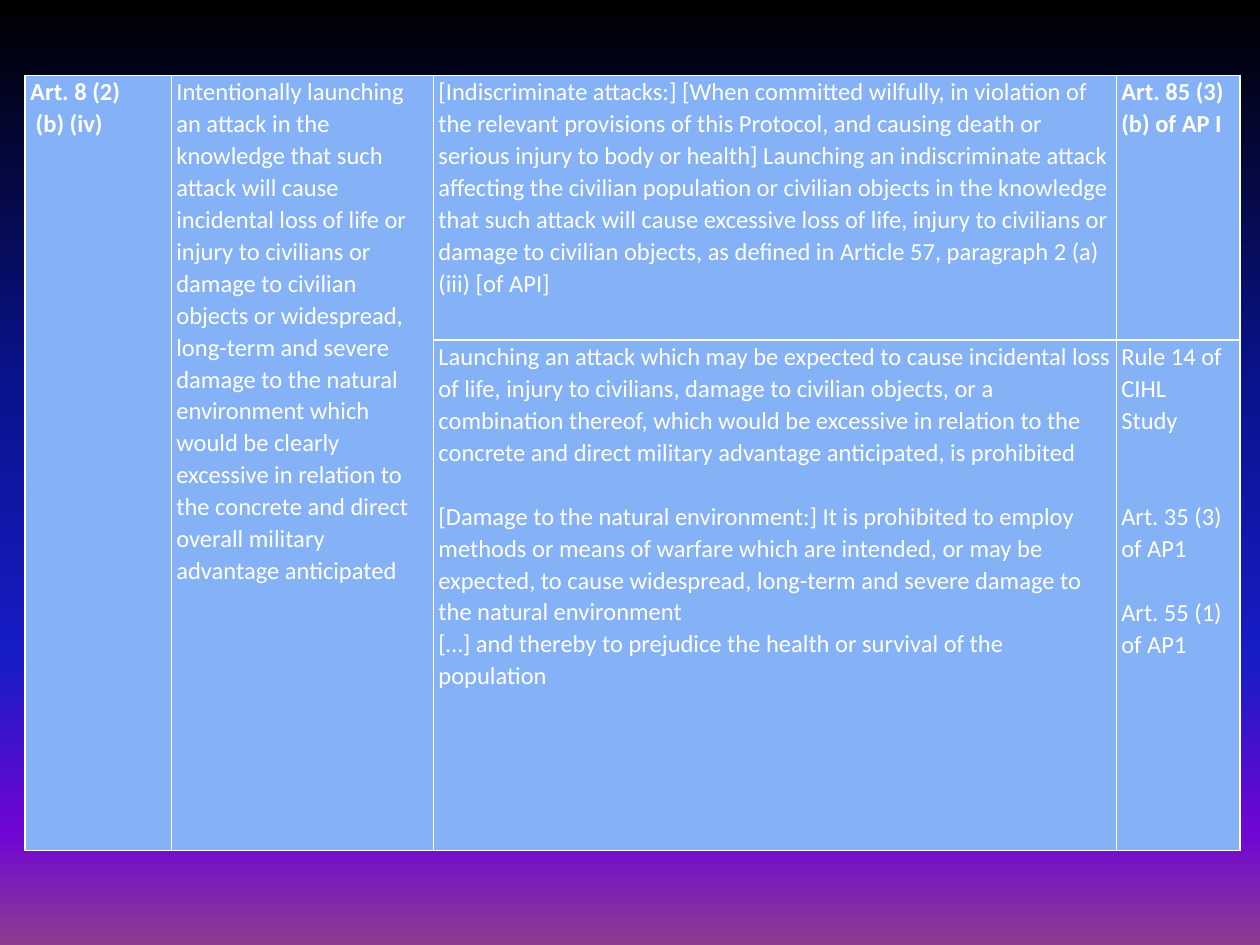
from dataclasses import dataclass

import lxml.etree
import pptx
import pptx.dml.color
import pptx.oxml.ns
import pptx.util
from pptx.util import Inches


@dataclass(frozen=True)
class Theme:
    font: str = "Calibri"
    size: float = 14
    line_spacing: float = 1.07
    text: str = "FFFFFF"
    cell: str = "85B2F6"
    border: str = "FFFFFF"
    border_width: float = 1
    background: tuple = (
        (0, "000000"),
        (40, "0A128C"),
        (70, "181CC7"),
        (88, "7005D4"),
        (100, "8C3D91"),
    )


@dataclass(frozen=True)
class Para:
    text: str
    bold: bool = False
    gap_lines: int = 0


@dataclass(frozen=True)
class Entry:
    row: int
    col: int
    paras: tuple
    row_span: int = 1


THEME = Theme()
LINE_HEIGHT = 18.3
COLUMNS = (1.16, 2.08, 5.42, 0.98)
ROWS = (2.1, 3.66)

ENTRIES = (
    Entry(0, 0, (Para("Art. 8 (2)\v (b) (iv)", bold=True),), row_span=2),
    Entry(0, 1, (Para(
        "Intentionally launching an attack in the knowledge that such attack "
        "will cause incidental loss of life or injury to civilians or damage "
        "to civilian objects or widespread, long-term and severe damage to "
        "the natural environment which would be clearly excessive in relation "
        "to the concrete and direct overall military advantage anticipated"),),
        row_span=2),
    Entry(0, 2, (Para(
        "[Indiscriminate attacks:] [When committed wilfully, in violation of "
        "the relevant provisions of this Protocol, and causing death or "
        "serious injury to body or health] Launching an indiscriminate attack "
        "affecting the civilian population or civilian objects in the "
        "knowledge that such attack will cause excessive loss of life, injury "
        "to civilians or damage to civilian objects, as defined in Article "
        "57, paragraph 2 (a) (iii) [of API]"),)),
    Entry(0, 3, (Para("Art. 85 (3) (b) of AP I", bold=True),)),
    Entry(1, 2, (
        Para(
            "Launching an attack which may be expected to cause incidental "
            "loss of life, injury to civilians, damage to civilian objects, "
            "or a combination thereof, which would be excessive in relation "
            "to the concrete and direct military advantage anticipated, is "
            "prohibited"),
        Para(
            "[Damage to the natural environment:] It is prohibited to employ "
            "methods or means of warfare which are intended, or may be "
            "expected, to cause widespread, long-term and severe damage to "
            "the natural environment", gap_lines=1),
        Para(
            "[…] and thereby to prejudice the health or survival of the "
            "population"),
    )),
    Entry(1, 3, (
        Para("Rule 14 of CIHL\vStudy"),
        Para("Art. 35 (3) of AP1", gap_lines=2),
        Para("Art. 55 (1) of AP1", gap_lines=1),
    )),
)


def rgb(value: str) -> pptx.dml.color.RGBColor:
    return pptx.dml.color.RGBColor.from_string(value)


def add_color(parent, value: str) -> None:
    qn = pptx.oxml.ns.qn
    lxml.etree.SubElement(parent, qn("a:srgbClr"), val=value)


def set_background(s) -> None:
    qn = pptx.oxml.ns.qn
    fill = s.background.fill
    fill.gradient()
    fill.gradient_angle = 270
    stops = next(s.element.iter(qn("a:gsLst")))
    for stop in list(stops):
        stops.remove(stop)
    for position, color in THEME.background:
        stop = lxml.etree.SubElement(stops, qn("a:gs"), pos=str(position * 1000))
        add_color(stop, color)


def style_cell(cell) -> None:
    qn = pptx.oxml.ns.qn
    cell.margin_left = cell.margin_right = Inches(0.04)
    cell.margin_top = cell.margin_bottom = 0
    props = cell.fill and cell._tc.get_or_add_tcPr()
    width = str(int(pptx.util.Pt(THEME.border_width)))
    for side in ("lnL", "lnR", "lnT", "lnB"):
        line = lxml.etree.SubElement(props, qn(f"a:{side}"), w=width)
        add_color(lxml.etree.SubElement(line, qn("a:solidFill")), THEME.border)
    cell.fill.solid()
    cell.fill.fore_color.rgb = rgb(THEME.cell)


def write_entry(table, entry: Entry) -> None:
    cell = table.cell(entry.row, entry.col)
    if entry.row_span > 1:
        cell.merge(table.cell(entry.row + entry.row_span - 1, entry.col))
    tf = cell.text_frame
    for i, para in enumerate(entry.paras):
        p = tf.add_paragraph() if i else tf.paragraphs[0]
        p.text = para.text
        p.line_spacing = THEME.line_spacing
        p.space_before = pptx.util.Pt(para.gap_lines * LINE_HEIGHT)
        for r in p.runs:
            r.font.name = THEME.font
            r.font.size = pptx.util.Pt(THEME.size)
            r.font.bold = para.bold
            r.font.color.rgb = rgb(THEME.text)


def add_comparison_table(s) -> None:
    table = s.shapes.add_table(
        len(ROWS), len(COLUMNS), Inches(0.2), Inches(0.6),
        Inches(sum(COLUMNS)), Inches(sum(ROWS))).table
    table.first_row = table.horz_banding = False
    for column, width in zip(table.columns, COLUMNS):
        column.width = Inches(width)
    for row, height in zip(table.rows, ROWS):
        row.height = Inches(height)
    for cell in table.iter_cells():
        style_cell(cell)
    for entry in ENTRIES:
        write_entry(table, entry)


def main() -> None:
    prs = pptx.Presentation()
    prs.slide_width, prs.slide_height = Inches(10), Inches(7.5)
    s = prs.slides.add_slide(prs.slide_layouts[6])
    set_background(s)
    add_comparison_table(s)
    prs.save("out.pptx")


if __name__ == "__main__":
    main()
